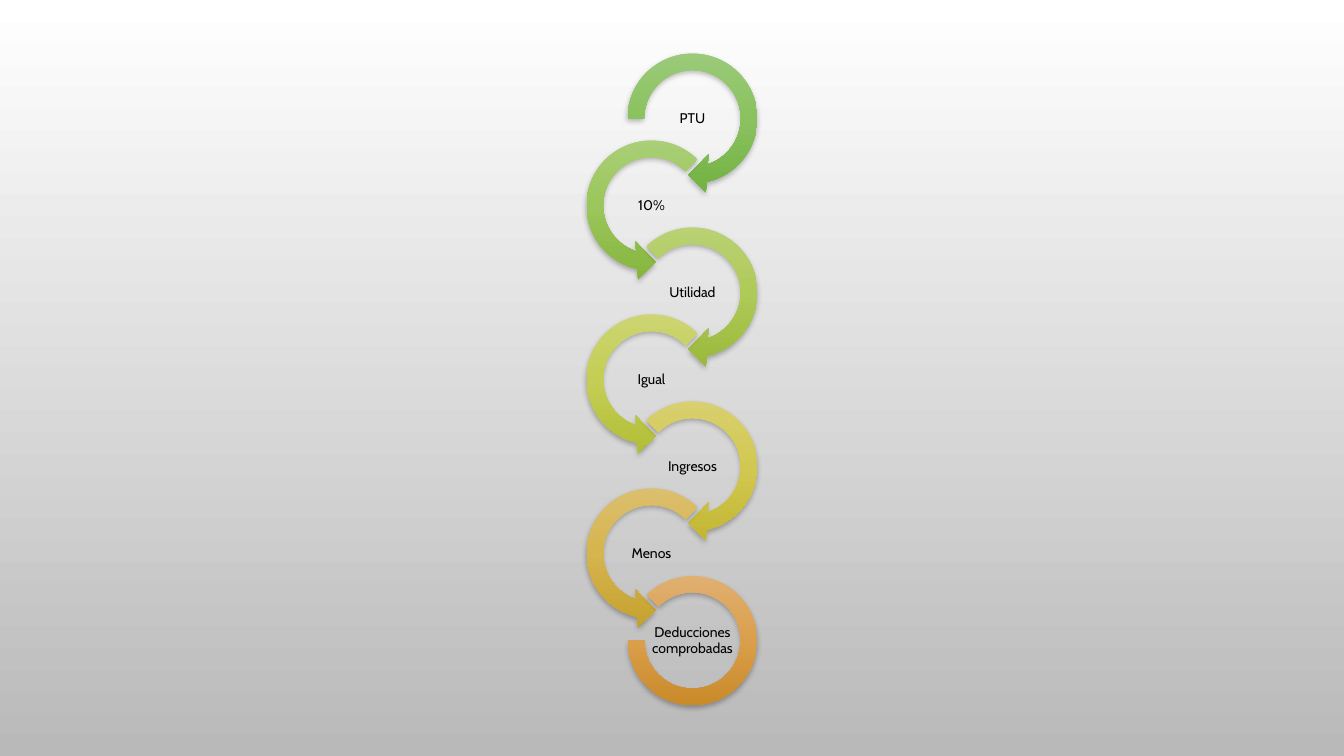
import lxml.etree
import pptx
import pptx.dml.color
import pptx.enum.shapes
import pptx.enum.text
import pptx.oxml
import pptx.oxml.ns
import pptx.util

PX = 914400 / 100.8
COLOURS = {
    "background": ("FFFFFF", "B9B9B9"),
    "PTU": ("9ECC7E", "8AC25F", "73B142"),
    "10%": ("ACD07B", "9BC65B", "85B53E"),
    "Utilidad": ("BCD379", "AECA58", "9AB93A"),
    "Igual": ("CED677", "C4CE54", "B2BD36"),
    "Ingresos": ("D9D175", "D2C851", "C1B632"),
    "Menos": ("DDC173", "D6B44E", "C5A12D"),
    "Deducciones comprobadas": ("E0B071", "DA9F4B", "C98A29"),
    "text": "000000",
}
SHADOW = (
    '<a:outerShdw xmlns:a="http://schemas.openxmlformats.org/drawingml/2006/main" '
    'blurRad="50800" dist="25400" dir="5400000" rotWithShape="0">'
    '<a:srgbClr val="000000"><a:alpha val="28000"/></a:srgbClr></a:outerShdw>'
)


def px(*lengths):
    return [pptx.util.Emu(round(length * PX)) for length in lengths]


def fill_downwards(fill, colours):
    """Fill with evenly spaced gradient colours from top to bottom."""
    fill.gradient()
    fill.gradient_angle = 270
    stop_list = fill._xPr.find(".//" + pptx.oxml.ns.qn("a:gsLst"))
    for _ in colours[2:]:
        lxml.etree.SubElement(stop_list, pptx.oxml.ns.qn("a:gs"), pos="0")
    for index, (stop, colour) in enumerate(zip(stop_list, colours)):
        stop.set("pos", str(100000 * index // (len(colours) - 1)))
        for old_colour in list(stop):
            stop.remove(old_colour)
        lxml.etree.SubElement(stop, pptx.oxml.ns.qn("a:srgbClr"), val=colour)


presentation = pptx.Presentation()
presentation.slide_width, presentation.slide_height = px(1344, 756)
slide = presentation.slides.add_slide(presentation.slide_layouts[6])
fill_downwards(slide.background.fill, COLOURS["background"])
chain = slide.shapes.add_group_shape()

KINDS = pptx.enum.shapes.MSO_SHAPE
RIGHT, LEFT = 617, 576
TOP, STEP, SIZE = 43, 87, 151
ARC_INSET = 11
STEPS = ["PTU", "10%", "Utilidad", "Igual", "Ingresos", "Menos", "Deducciones comprobadas"]

for number, label in enumerate(STEPS):
    left = LEFT if number % 2 else RIGHT
    top = TOP + STEP * number
    inset = 0
    if number == len(STEPS) - 1:
        kind, inset = KINDS.BLOCK_ARC, ARC_INSET
        adjustments = (135, 108, 0.127)
    elif number % 2:
        kind = KINDS.LEFT_CIRCULAR_ARROW
        adjustments = (0.11, 11.423, 63, 189, 0.125)
    else:
        kind = KINDS.CIRCULAR_ARROW
        adjustments = (0.11, 11.423, 45, 135 if number else 108, 0.125)

    diameter = SIZE - 2 * inset
    ring = chain.shapes.add_shape(kind, *px(left + inset, top + inset, diameter, diameter))
    for index, adjustment in enumerate(adjustments):
        ring.adjustments[index] = adjustment
    fill_downwards(ring.fill, COLOURS[label])
    ring.line.fill.background()
    ring.shadow.inherit = False
    effects = ring._element.spPr.find(pptx.oxml.ns.qn("a:effectLst"))
    effects.append(pptx.oxml.parse_xml(SHADOW))

    caption = chain.shapes.add_textbox(*px(left + 33, top + 55, 85, 42)).text_frame
    caption.word_wrap = True
    caption.vertical_anchor = pptx.enum.text.MSO_ANCHOR.MIDDLE
    (caption.margin_left, caption.margin_top,
     caption.margin_right, caption.margin_bottom) = px(1, 1, 1, 1)
    paragraph = caption.paragraphs[0]
    paragraph.alignment = pptx.enum.text.PP_ALIGN.CENTER
    paragraph.line_spacing = 0.9
    paragraph.space_after = pptx.util.Pt(3.5)
    run = paragraph.add_run()
    run.text = label
    run.font.name = "Cabin"
    run.font.size = pptx.util.Pt(10)
    run.font.color.rgb = pptx.dml.color.RGBColor.from_string(COLOURS["text"])

presentation.save("out.pptx")
